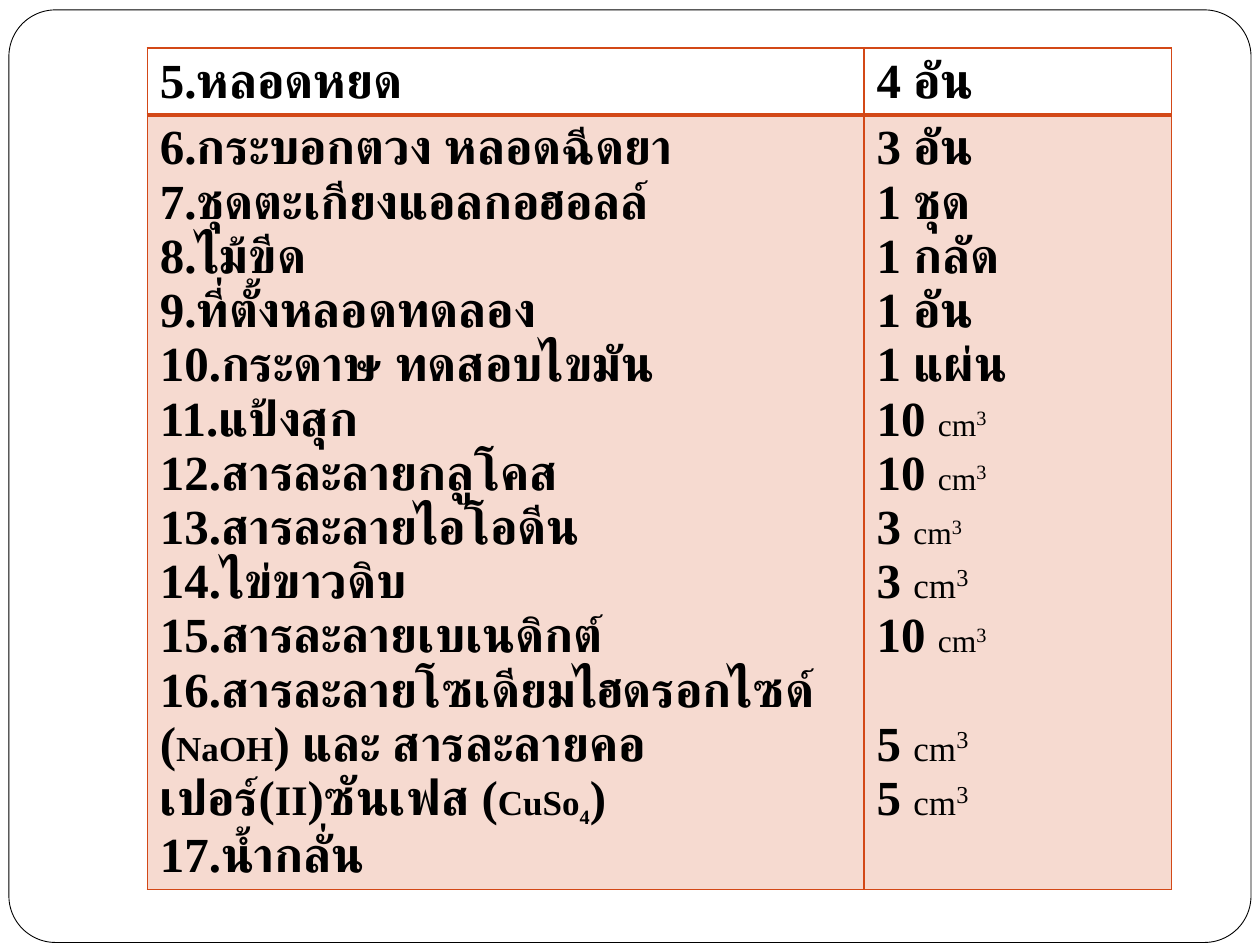
from lxml import etree
from pptx import Presentation
from pptx.dml.color import RGBColor
from pptx.enum.shapes import MSO_SHAPE
from pptx.oxml.ns import qn
from pptx.util import Cm, Pt

ROUND = MSO_SHAPE.ROUNDED_RECTANGLE
BLACK = RGBColor(0, 0, 0)
WHITE = RGBColor(255, 255, 255)
RUST = RGBColor(0xD3, 0x48, 0x17)
FACE = "Times New Roman"
LINE = Pt(31)  # pitch of one text line

# A paragraph is a list of runs: text, then any format values
ITEMS = [[(text, {})] for text in (
    "6.กระบอกตวง หลอดฉีดยา",
    "7.ชุดตะเกียงแอลกอฮอลล์",
    "8.ไม้ขีด",
    "9.ที่ตั้งหลอดทดลอง",
    "10.กระดาษ ทดสอบไขมัน",
    "11.แป้งสุก",
    "12.สารละลายกลูโคส",
    "13.สารละลายไอโอดีน",
    "14.ไข่ขาวดิบ",
    "15.สารละลายเบเนดิกต์",
)] + [
    [("16.สารละลายโซเดียมไฮดรอกไซด์ (", {}),
     ("NaOH", {"size": Pt(20)}),
     (") และ สารละลายคอเปอร์(", {}),
     ("II", {"size": Pt(24)}),
     (")ซันเฟส (", {}),
     ("CuSo", {"size": Pt(20)}),
     ("4", {"size": Pt(20), "base": -25}),
     (")", {})],
    [("17.น้ำกลั่น", {})],
]
COUNTS = ["3 อัน", "1 ชุด", "1 กลัด", "1 อัน", "1 แผ่น"]
# Amount, size of the unit, size of its exponent
DOSES = [(10, 18, 20), (10, 18, 20), (3, 18, 20), (3, 20, 24),
         (10, 18, 20), (5, 20, 24), (5, 20, 24)]
GAP = len(COUNTS) + 5  # first amount that belongs to item 16


def dose(count, unit, power):
    return [(f"{count} ", {}),
            ("cm", {"size": Pt(unit), "bold": False}),
            ("3", {"size": Pt(power), "bold": False, "base": 30})]


def add_run(para, text, form):
    run = para.add_run()
    run.text = text
    look = {"name": FACE, "size": Pt(28), "bold": True} | form
    base = look.pop("base", 0)
    for key, value in look.items():
        setattr(run.font, key, value)
    run.font.color.rgb = BLACK
    props = run.font._element
    etree.SubElement(props, qn("a:cs"), typeface=FACE)
    if base:
        props.set("baseline", str(base * 1000))


def fill_text(cell, paras):
    frame = cell.text_frame
    for i, runs in enumerate(paras):
        para = frame.add_paragraph() if i else frame.paragraphs[0]
        for text, form in runs:
            add_run(para, text, form)


def add_edges(cell, widths):
    props = cell._tc.get_or_add_tcPr()
    for i, (side, width) in enumerate(zip("LRTB", widths)):
        edge = etree.Element(qn(f"a:ln{side}"), w=str(Pt(width)))
        fill = etree.SubElement(edge, qn("a:solidFill"))
        etree.SubElement(fill, qn("a:srgbClr"), val=str(RUST))
        props.insert(i, edge)


def tint(cell):
    cell.fill.solid()
    cell.fill.fore_color.rgb = RUST
    color = cell._tc.tcPr.find(f"{qn('a:solidFill')}/{qn('a:srgbClr')}")
    etree.SubElement(color, qn("a:alpha"), val="20000")


def add_frame(slide):
    box = slide.shapes.add_shape(ROUND, Cm(0.18), Cm(0.2), Cm(25.04), Cm(18.8))
    box.adjustments[0] = 0.05
    box.shadow.inherit = False
    box.fill.solid()
    box.fill.fore_color.rgb = WHITE
    box.line.color.rgb = BLACK
    box.line.width = Pt(0.5)


def add_list(slide):
    holder = slide.shapes.add_table(2, 2, Cm(2.97), Cm(0.97), Cm(20.65), Cm(17.1))
    table = holder.table
    for key in ("first_row", "horz_banding"):
        setattr(table, key, False)
    for col, width in zip(table.columns, (14.45, 6.2)):
        col.width = Cm(width)
    for row, height in zip(table.rows, (1.3, 13.2)):
        row.height = Cm(height)
    holder.height = Cm(17.1)

    # Top row is clear, the long row is tinted
    amounts = [[(text, {})] for text in COUNTS] + [dose(*d) for d in DOSES]
    rows = [([[("5.หลอดหยด", {})]], [[("4 อัน", {})]]), (ITEMS, amounts)]
    for r, pair in enumerate(rows):
        for c, paras in enumerate(pair):
            cell = table.cell(r, c)
            fill_text(cell, paras)
            if r:
                tint(cell)
            else:
                cell.fill.background()
            add_edges(cell, (1, 1, 1, 1) if r else (1, 1, 1, 2))
    # The second row meets the thick rule, and item 16 wraps over more lines
    for c in range(2):
        table.cell(1, c)._tc.tcPr.find(qn("a:lnT")).set("w", str(Pt(2)))
    table.cell(1, 1).text_frame.paragraphs[GAP].space_before = LINE


def main():
    deck = Presentation()
    deck.slide_width, deck.slide_height = Cm(25.4), Cm(19.05)
    slide = deck.slides.add_slide(deck.slide_layouts[6])
    add_frame(slide)
    add_list(slide)
    deck.save("out.pptx")


if __name__ == "__main__":
    main()
